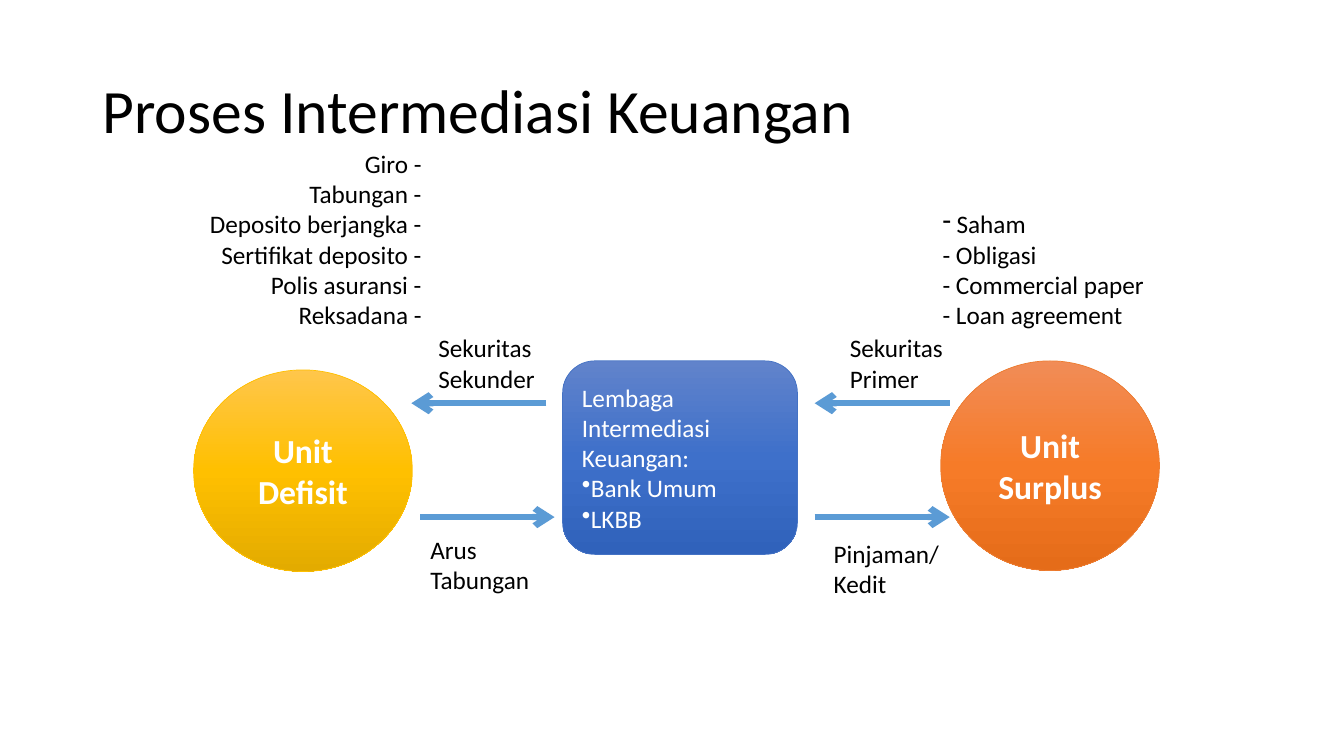
from copy import deepcopy
from dataclasses import dataclass

from lxml.etree import SubElement
from pptx import Presentation
from pptx.dml.color import RGBColor
from pptx.enum.shapes import MSO_CONNECTOR, MSO_SHAPE
from pptx.enum.text import MSO_ANCHOR, MSO_AUTO_SIZE, PP_ALIGN
from pptx.oxml.ns import qn
from pptx.util import Inches, Pt

FONT = "Calibri"
BLACK, WHITE, ARROW_BLUE = "000000", "FFFFFF", "5B9BD5"


@dataclass
class Line:
    text: str
    bullet: str = ""


@dataclass
class Style:
    size: int = 18
    color: str = BLACK
    bold: bool = False
    align: PP_ALIGN = PP_ALIGN.LEFT
    spacing: float = 1.0


@dataclass
class Node:
    preset: MSO_SHAPE
    box: tuple[float, float, float, float]
    gradient: tuple[str, str, str]
    outline: str
    lines: list[Line]
    style: Style


@dataclass
class Label:
    box: tuple[float, float, float, float]
    lines: list[Line]
    style: Style


@dataclass
class Arrow:
    start: float
    end: float
    y: float


def plain(*texts: str) -> list[Line]:
    return [Line(text) for text in texts]


LABEL = Style()
UNIT = Style(24, WHITE, True, PP_ALIGN.CENTER)

NODES = [
    Node(MSO_SHAPE.ROUNDED_RECTANGLE, (5.58, 3.58, 2.33, 1.92),
         ("6183CB", "3E70CA", "3062BB"), "4472C4",
         [Line("Lembaga Intermediasi Keuangan:"), Line("Bank Umum", "•"), Line("LKBB", "•")],
         Style(color=WHITE)),
    Node(MSO_SHAPE.OVAL, (1.92, 3.67, 2.17, 2),
         ("FFC64B", "FFC000", "E3AB00"), "FFC000", plain("Unit Defisit"), UNIT),
    Node(MSO_SHAPE.OVAL, (9.33, 3.58, 2.17, 2.08),
         ("F18C57", "F67B28", "E56C19"), "ED7D31", plain("Unit Surplus"), UNIT),
]

ARROWS = [
    Arrow(4.17, 5.5, 5.13),
    Arrow(8.08, 9.42, 5.13),
    Arrow(9.42, 8.08, 4),
    Arrow(5.42, 4.08, 4),
]

LABELS = [
    Label((4.25, 3.25, 1.17, 0.71), plain("Sekuritas", "Sekunder"), LABEL),
    Label((8.33, 3.25, 1.13, 0.71), plain("Sekuritas", "Primer"), LABEL),
    Label((4.17, 5.25, 1.19, 0.71), plain("Arus", "Tabungan"), LABEL),
    Label((8.17, 5.29, 1.26, 0.71), plain("Pinjaman/", "Kedit"), LABEL),
    Label((9.25, 2.02, 2.22, 1.31),
          [Line(" Saham", "-"),
           *plain("- Obligasi", "- Commercial paper", "- Loan agreement")], LABEL),
    Label((1.95, 1.42, 2.33, 1.92),
          plain("Giro -", "Tabungan -", "Deposito berjangka -",
                "Sertifikat deposito -", "Polis asuransi -", "Reksadana -"),
          Style(align=PP_ALIGN.RIGHT)),
]


def rgb(value: str) -> RGBColor:
    return RGBColor.from_string(value)


def write(tf, lines: list[Line], style: Style) -> None:
    for i, line in enumerate(lines):
        p = tf.paragraphs[0] if i == 0 else tf.add_paragraph()
        p.alignment = style.align
        p.line_spacing = style.spacing
        if line.bullet:
            SubElement(p._p.get_or_add_pPr(), qn("a:buChar")).set("char", line.bullet)
        r = p.add_run()
        r.text = line.text
        r.font.name = FONT
        r.font.size = Pt(style.size)
        r.font.bold = style.bold
        r.font.color.rgb = rgb(style.color)


def fill_gradient(sp, colors: tuple[str, str, str]) -> None:
    """Fill from top to bottom with evenly spaced stops."""
    sp.fill.gradient()
    sp.fill.gradient_angle = 270
    first = sp._element.spPr.find(".//" + qn("a:gs"))
    first.addnext(deepcopy(first))
    for i, (stop, color) in enumerate(zip(sp.fill.gradient_stops, colors)):
        stop.position = i / (len(colors) - 1)
        stop.color.rgb = rgb(color)


def add_node(slide, node: Node) -> None:
    sp = slide.shapes.add_shape(node.preset, *map(Inches, node.box))
    sp.shadow.inherit = False
    fill_gradient(sp, node.gradient)
    sp.line.color.rgb = rgb(node.outline)
    sp.line.width = Pt(0.5)
    tf = sp.text_frame
    tf.word_wrap = True
    tf.vertical_anchor = MSO_ANCHOR.MIDDLE
    write(tf, node.lines, node.style)


def add_arrow(slide, arrow: Arrow) -> None:
    y = Inches(arrow.y)
    cxn = slide.shapes.add_connector(
        MSO_CONNECTOR.STRAIGHT, Inches(arrow.start), y, Inches(arrow.end), y)
    cxn.line.color.rgb = rgb(ARROW_BLUE)
    cxn.line.width = Pt(4.5)
    SubElement(cxn.line._get_or_add_ln(), qn("a:tailEnd")).set("type", "arrow")
    SubElement(cxn._element.spPr, qn("a:effectLst"))


def add_label(slide, label: Label) -> None:
    tf = slide.shapes.add_textbox(*map(Inches, label.box)).text_frame
    tf.word_wrap = False
    tf.auto_size = MSO_AUTO_SIZE.SHAPE_TO_FIT_TEXT
    write(tf, label.lines, label.style)


def add_title(slide, text: str) -> None:
    box = (0.92, 0.4, 11.5, 1.45)
    tf = slide.shapes.add_textbox(*map(Inches, box)).text_frame
    tf.word_wrap = True
    tf.vertical_anchor = MSO_ANCHOR.MIDDLE
    write(tf, plain(text), Style(size=44, spacing=0.9))


def main() -> None:
    prs = Presentation()
    prs.slide_width, prs.slide_height = Inches(13.33), Inches(7.5)
    slide = prs.slides.add_slide(prs.slide_layouts[6])
    add_title(slide, "Proses Intermediasi Keuangan")
    for node in NODES:
        add_node(slide, node)
    for arrow in ARROWS:
        add_arrow(slide, arrow)
    for label in LABELS:
        add_label(slide, label)
    prs.save("out.pptx")


if __name__ == "__main__":
    main()
